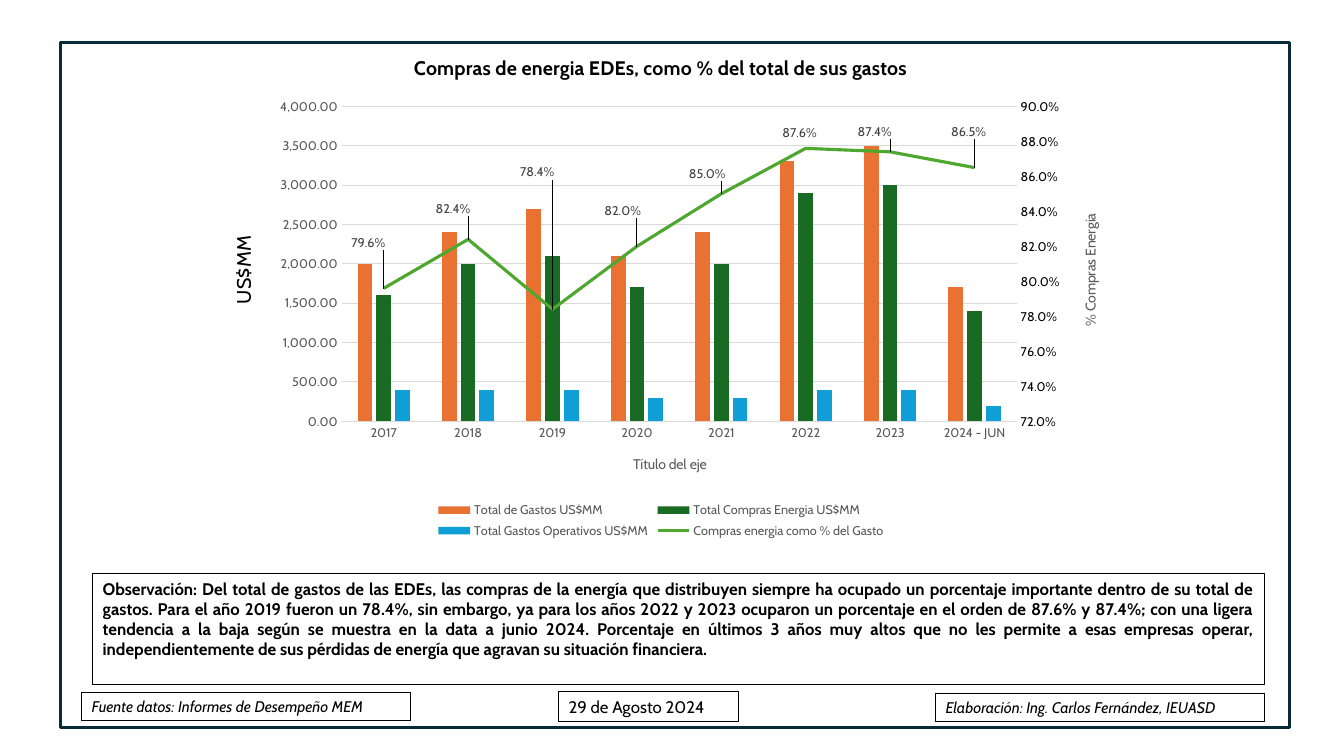
"""Build the slide on energy purchases as a share of total spending."""
from pptx import Presentation
from pptx.chart.axis import ValueAxis
from pptx.chart.data import CategoryChartData
from pptx.dml.color import RGBColor
from pptx.enum.chart import XL_CHART_TYPE as ChartType, XL_LABEL_POSITION as LabelPosition
from pptx.enum.chart import XL_LEGEND_POSITION as LegendPosition, XL_MARKER_STYLE as MarkerStyle
from pptx.enum.chart import XL_TICK_MARK as TickMark
from pptx.enum.shapes import MSO_SHAPE as Shape
from pptx.enum.text import MSO_AUTO_SIZE as AutoSize, PP_ALIGN as Align
from pptx.oxml import parse_xml
from pptx.util import Inches, Pt

COLORS = {
    "black": "000000", "frame": "092A38", "gray": "595959", "label": "404040",
    "grid": "D9D9D9", "total": "E97132", "purchases": "196B24",
    "operating": "0F9ED5", "share": "4EA72E",
}
FONT = "Cabin"
CHART_NS = 'xmlns:c="http://schemas.openxmlformats.org/drawingml/2006/chart"'
YEARS = ["2017", "2018", "2019", "2020", "2021", "2022", "2023", "2024 - JUN"]
SPENDING = [
    ("Total de Gastos US$MM", "total", [2000, 2400, 2700, 2100, 2400, 3300, 3500, 1700]),
    ("Total Compras Energia US$MM", "purchases", [1600, 2000, 2100, 1700, 2000, 2900, 3000, 1400]),
    ("Total Gastos Operativos US$MM", "operating", [400, 400, 400, 300, 300, 400, 400, 200]),
]
SHARE_NAME = "Compras energia como % del Gasto"
SHARES = [0.796, 0.824, 0.784, 0.82, 0.85, 0.876, 0.874, 0.865]
LABEL_SHIFTS = [(-0.04, -0.09), (-0.04, -0.06), (-0.04, -0.27), (-0.04, -0.07),
                (-0.04, -0.04), (-0.03, -0.03), (-0.04, -0.04), (-0.03, -0.07)]
OBSERVATION = (
    "Observación: Del total de gastos de las EDEs, las compras de la energía que distribuyen "
    "siempre ha ocupado un porcentaje importante dentro de su total de gastos. Para el año 2019 "
    "fueron un 78.4%, sin embargo, ya para los años 2022 y 2023 ocuparon un porcentaje en el "
    "orden de 87.6% y 87.4%; con una ligera tendencia a la baja según se muestra en la data a "
    "junio 2024. Porcentaje en últimos 3 años muy altos que no les permite a esas empresas "
    "operar, independientemente de sus pérdidas de energía que agravan su situación financiera. "
)


def rgb(name):
    """Return a named colour."""
    return RGBColor.from_string(COLORS[name])


def style_font(font, size, color="black", bold=False, italic=False):
    """Set the face, size, colour and style of a font."""
    font.name, font.size = FONT, Pt(size)
    font.bold, font.italic = bold, italic
    font.color.rgb = rgb(color)


def style_line(line, color, width):
    """Set the colour and width of a line."""
    line.color.rgb = rgb(color)
    line.width = Pt(width)


def add_frame(page, left, top, width, height):
    """Add the outline around the slide content."""
    frame = page.shapes.add_shape(
        Shape.RECTANGLE, Inches(left), Inches(top), Inches(width), Inches(height))
    frame.shadow.inherit = False
    frame.fill.background()
    style_line(frame.line, "frame", 2)


def add_note(page, place, text, size, border=0, wrap=False, align=Align.LEFT, **style):
    """Add a bordered text box."""
    box = page.shapes.add_textbox(*(Inches(length) for length in place))
    style_line(box.line, "black", border)
    box.text_frame.word_wrap = wrap
    box.text_frame.auto_size = AutoSize.SHAPE_TO_FIT_TEXT
    para = box.text_frame.paragraphs[0]
    para.alignment = align
    span = para.add_run()
    span.text = text
    style_font(span.font, size, **style)


def write_title(title, text, size, color="black", bold=False, upright=False):
    """Write a chart or axis title."""
    span = title.text_frame.paragraphs[0].add_run()
    span.text = text
    style_font(span.font, size, color, bold)
    if upright:
        title.text_frame
        title.element.xpath(".//a:bodyPr")[0].set("rot", "-5400000")


def layout_xml(x, y, width=None, height=None, inner=False):
    """Return a manual layout in fractions of the chart."""
    parts = {"x": x, "y": y}
    modes = ""
    if width:
        parts.update(w=width, h=height)
        modes = '<c:xMode val="edge"/><c:yMode val="edge"/>'
    target = '<c:layoutTarget val="inner"/>' if inner else ""
    values = "".join(f'<c:{key} val="{value}"/>' for key, value in parts.items())
    return parse_xml(f"<c:layout {CHART_NS}><c:manualLayout>{target}{modes}{values}"
                     "</c:manualLayout></c:layout>")


def style_axis(axis, title, title_size, title_color, color, upright=True):
    """Set the title, ticks and labels of an axis."""
    write_title(axis.axis_title, title, title_size, title_color, upright=upright)
    axis.major_tick_mark = axis.minor_tick_mark = TickMark.NONE
    style_font(axis.tick_labels.font, 9, color)


def scale_axis(axis, low, high, step, number_format):
    """Set the range and number format of a value axis and hide its line."""
    axis.minimum_scale, axis.maximum_scale, axis.major_unit = low, high, step
    axis.tick_labels.number_format = number_format
    axis.tick_labels.number_format_is_linked = False
    axis.format.line.fill.background()


def move_share_to_line(chart):
    """Turn the last series into a line and return its right axis."""
    series = chart.element.xpath(".//c:ser")[-1]
    for flag in series.xpath("c:invertIfNegative"):
        series.remove(flag)
    line_plot = parse_xml(
        f'<c:lineChart {CHART_NS}><c:grouping val="standard"/><c:varyColors val="0"/>'
        '<c:marker val="1"/><c:axId val="5001"/><c:axId val="5002"/></c:lineChart>')
    line_plot.insert(2, series)
    chart.element.xpath(".//c:barChart")[0].addnext(line_plot)
    hidden, right = (parse_xml(
        f'<c:{kind} {CHART_NS}><c:axId val="{own}"/><c:scaling><c:orientation val="minMax"/>'
        f'</c:scaling><c:delete val="{deleted}"/><c:axPos val="{side}"/>'
        f'<c:crossAx val="{other}"/><c:crosses val="{crosses}"/></c:{kind}>')
        for kind, own, other, deleted, side, crosses in [
            ("catAx", 5001, 5002, 1, "b", "autoZero"), ("valAx", 5002, 5001, 0, "r", "max")])
    primary = chart.element.xpath(".//c:valAx")[0]
    primary.addnext(right)
    right.addnext(hidden)
    return ValueAxis(right)


def style_share(chart, series):
    """Style the share line and place its labels."""
    style_line(series.format.line, "share", 2.25)
    series.marker.style = MarkerStyle.NONE
    series.smooth = False
    for index, shift in enumerate(LABEL_SHIFTS):
        label = series.points[index].data_label
        label.position = LabelPosition.RIGHT
        style_font(label.font, 9, "label")
        element = chart.element.xpath(".//c:dLbl")[index]
        element.insert(1, layout_xml(*shift))
        element.insert(2, parse_xml(
            f'<c:numFmt {CHART_NS} formatCode="0.0%" sourceLinked="0"/>'))
    labels = series.data_labels
    labels.show_value = True
    labels.number_format, labels.number_format_is_linked = "0.0%", False
    labels.position = LabelPosition.RIGHT
    style_font(labels.font, 9, "label")


def add_energy_chart(page):
    """Add the spending columns with the share line."""
    data = CategoryChartData()
    data.categories = YEARS
    for name, color, values in SPENDING:
        data.add_series(name, values, "#,##0.00")
    data.add_series(SHARE_NAME, SHARES, "0.0%")
    chart = page.shapes.add_chart(
        ChartType.COLUMN_CLUSTERED, Inches(2.03), Inches(0.35),
        Inches(9.05), Inches(5.04), data).chart
    chart.font.name, chart.font.size = "Arial", Pt(10)
    write_title(chart.chart_title, "Compras de energia EDEs, como % del total de sus gastos",
                14, bold=True)

    left_axis = chart.value_axis
    right_axis = move_share_to_line(chart)
    columns, line = chart.plots
    columns.gap_width, columns.overlap = 219, -27
    columns.vary_by_categories = False
    for series, (name, color, values) in zip(columns.series, SPENDING):
        series.format.fill.solid()
        series.format.fill.fore_color.rgb = rgb(color)
    style_share(chart, line.series[0])

    style_axis(chart.category_axis, "Título del eje", 10, "gray", "gray", upright=False)
    style_line(chart.category_axis.format.line, "grid", 0.75)
    style_axis(left_axis, "US$MM", 14, "black", "gray")
    scale_axis(left_axis, 0, 4000, 500, "#,##0.00")
    style_line(left_axis.major_gridlines.format.line, "grid", 0.75)
    style_axis(right_axis, "% Compras Energia", 10, "gray", "black")
    scale_axis(right_axis, 0.72, 0.9, 0.02, "0.0%")

    chart.has_legend = True
    chart.legend.position = LegendPosition.BOTTOM
    chart.legend.include_in_layout = False
    style_font(chart.legend.font, 9, "gray")
    chart.element.xpath(".//c:legendPos")[0].addnext(layout_xml(0.25, 0.91, 0.5, 0.09))
    plot_area = chart.element.xpath(".//c:plotArea")[0]
    for layout in plot_area.xpath("c:layout"):
        plot_area.remove(layout)
    plot_area.insert(0, layout_xml(0.15, 0.14, 0.74, 0.62, inner=True))


def main():
    """Build and save the deck."""
    deck = Presentation()
    deck.slide_width, deck.slide_height = Inches(13.33), Inches(7.5)
    page = deck.slides.add_slide(deck.slide_layouts[6])
    add_note(page, (0.81, 6.87, 3.26, 0.28), "Fuente datos: Informes de Desempeño MEM",
             11, italic=True)
    add_frame(page, 0.6, 0.42, 12.19, 6.8)
    add_note(page, (5.54, 6.86, 1.78, 0.3), "29 de Agosto 2024", 12)
    add_note(page, (9.28, 6.88, 3.26, 0.28), "Elaboración: Ing. Carlos Fernández, IEUASD",
             11, italic=True)
    add_note(page, (0.92, 5.69, 11.62, 1.1), OBSERVATION, 12, border=1, wrap=True,
             align=Align.JUSTIFY, bold=True)
    add_energy_chart(page)
    deck.save("out.pptx")


if __name__ == "__main__":
    main()
